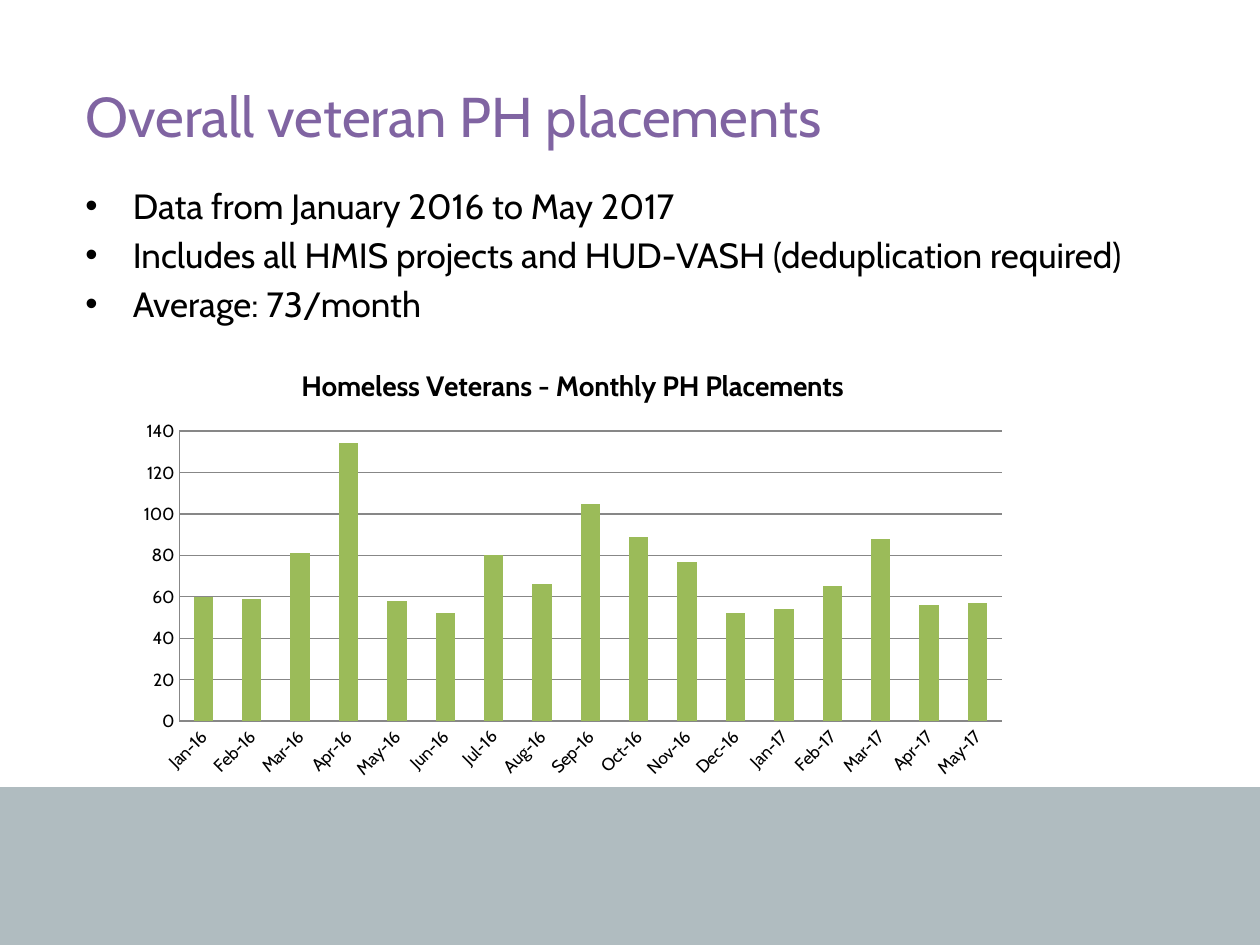
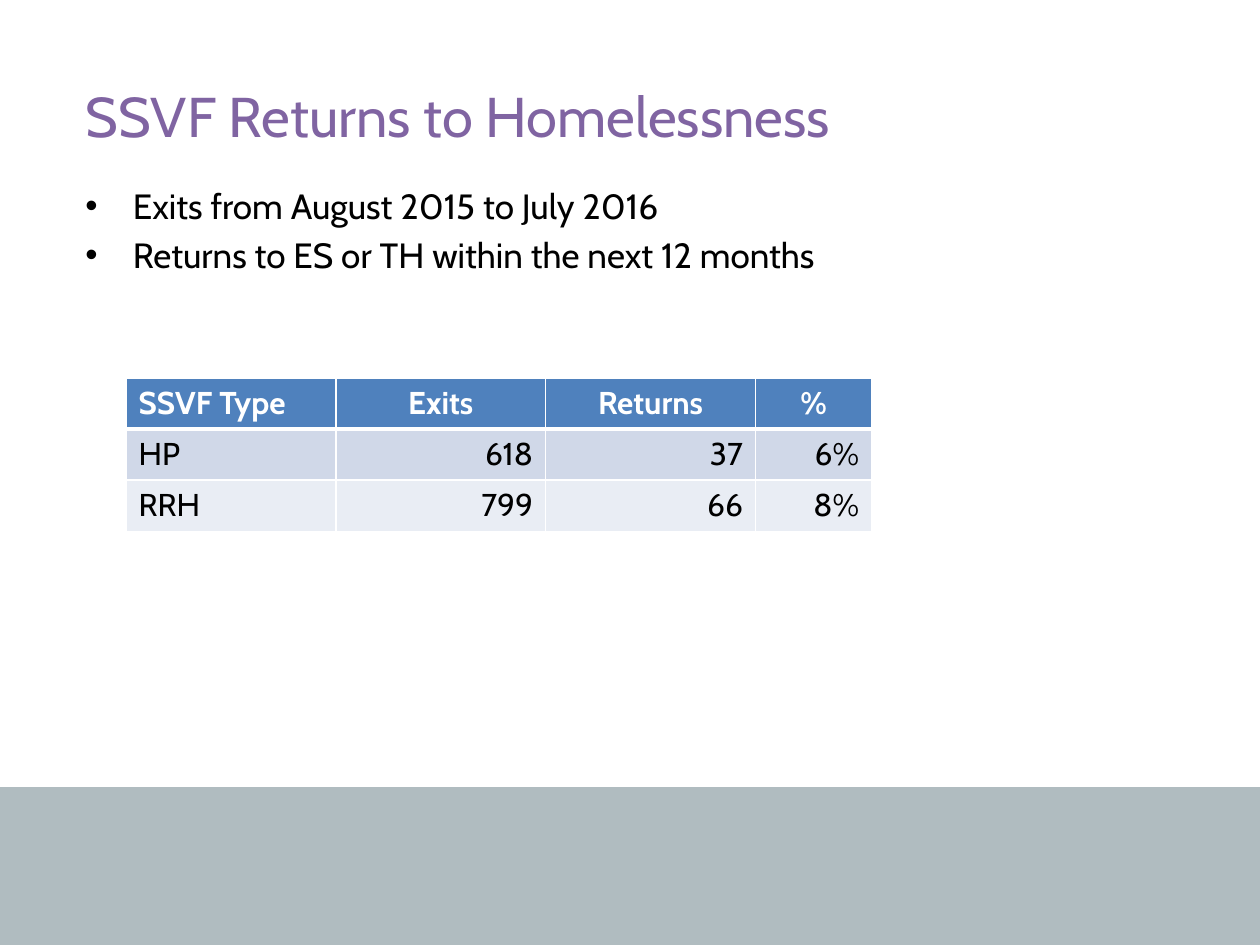
from dataclasses import dataclass

import pptx
import pptx.chart.data
import pptx.dml.color
import pptx.enum.chart
import pptx.enum.shapes
import pptx.enum.text
import pptx.oxml
import pptx.oxml.ns
import pptx.util
from lxml import etree
from pptx.util import Cm

FONT = "Cabin"
BLACK, WHITE = "000000", "FFFFFF"
PURPLE, BAND_GREY, GRID_GREY = "8064A2", "B0BCC0", "878787"
BAR_GREEN, HEADER_BLUE = "9BBB59", "4F81BD"
ROW_FILLS = ("D0D8E8", "E9EDF4")
SLIDE_W, SLIDE_H, BAND_H = Cm(25.4), Cm(19.05), Cm(3.18)
TEXT_LEFT, TEXT_W, INDENT = Cm(1.47), Cm(22.86), Cm(0.96)
CONTENT_LEFT = Cm(2.54)

ALIGN = pptx.enum.text.PP_ALIGN

MONTHS = "Jan Feb Mar Apr May Jun Jul Aug Sep Oct Nov Dec".split()
PLACEMENTS = (60, 59, 81, 134, 58, 52, 80, 66, 105, 89, 77, 52, 54, 65, 88, 56, 57)


@dataclass
class Column:
    header: str
    width: int
    values: tuple[str, ...]
    header_align: ALIGN = ALIGN.CENTER
    align: ALIGN = ALIGN.RIGHT


RETURNS_TABLE = (
    Column("SSVF Type", Cm(4.23), ("HP", "RRH"), ALIGN.LEFT, ALIGN.LEFT),
    Column("Exits", Cm(4.23), ("618", "799")),
    Column("Returns", Cm(4.23), ("37", "66")),
    Column("%", Cm(2.34), ("6%", "8%")),
)


# Shared helpers
def rgb(value: str) -> pptx.dml.color.RGBColor:
    return pptx.dml.color.RGBColor.from_string(value)


def set_font(font, size: float, color: str = BLACK, bold: bool = False) -> None:
    font.name, font.size, font.bold = FONT, pptx.util.Pt(size), bold
    font.color.rgb = rgb(color)


def write(p, text: str, *, size: float, color: str = BLACK, bold: bool = False,
          align: ALIGN = ALIGN.LEFT, before: float = 0) -> None:
    p.alignment = align
    p.space_before = pptx.util.Pt(before)
    r = p.add_run()
    r.text = text
    set_font(r.font, size, color, bold)


def add_bullet(p) -> None:
    pPr = p._p.get_or_add_pPr()
    pPr.set("marL", str(INDENT))
    pPr.set("indent", str(-INDENT))
    for tag, name, value in (("a:buFont", "typeface", "Arial"), ("a:buChar", "char", "•")):
        etree.SubElement(pPr, pptx.oxml.ns.qn(tag)).set(name, value)


def set_border(cell, side: str, width: float) -> None:
    ln = etree.SubElement(cell._tc.get_or_add_tcPr(), pptx.oxml.ns.qn(f"a:ln{side}"))
    ln.set("w", str(pptx.util.Pt(width)))
    fill = etree.SubElement(ln, pptx.oxml.ns.qn("a:solidFill"))
    etree.SubElement(fill, pptx.oxml.ns.qn("a:srgbClr")).set("val", WHITE)


def new_slide(prs, title: str, bullets: tuple[str, ...]):
    s = prs.slides.add_slide(prs.slide_layouts[5])

    # Bottom band
    band = s.shapes.add_shape(pptx.enum.shapes.MSO_SHAPE.RECTANGLE,
                              0, SLIDE_H - BAND_H, SLIDE_W, BAND_H)
    band.shadow.inherit = False
    band.fill.solid()
    band.fill.fore_color.rgb = rgb(BAND_GREY)
    band.line.fill.background()

    # Title
    sp = s.shapes.title
    sp.left, sp.top, sp.width, sp.height = TEXT_LEFT, Cm(1.52), TEXT_W, Cm(1.8)
    tf = sp.text_frame
    tf.word_wrap = True
    tf.auto_size = pptx.enum.text.MSO_AUTO_SIZE.NONE
    tf.vertical_anchor = pptx.enum.text.MSO_ANCHOR.TOP
    write(tf.paragraphs[0], title, size=32, color=PURPLE)

    # Bullets
    tf = s.shapes.add_textbox(TEXT_LEFT, Cm(3.6), TEXT_W, Cm(1.05) * len(bullets)).text_frame
    tf.word_wrap = True
    for i, text in enumerate(bullets):
        p = tf.add_paragraph() if i else tf.paragraphs[0]
        add_bullet(p)
        write(p, text, size=20, before=4 if i else 0)
    return s


# Slide contents
def add_placements_chart(s) -> None:
    data = pptx.chart.data.CategoryChartData()
    data.categories = [f"{MONTHS[i % 12]}-{16 + i // 12}" for i in range(len(PLACEMENTS))]
    data.add_series("PH Placements", PLACEMENTS)
    chart = s.shapes.add_chart(pptx.enum.chart.XL_CHART_TYPE.COLUMN_STACKED, CONTENT_LEFT,
                               Cm(6.99), Cm(18.01), Cm(8.89), data).chart
    set_font(chart.font, 10)
    chart.has_legend = False
    chart.has_title = True
    write(chart.chart_title.text_frame.paragraphs[0],
          "Homeless Veterans - Monthly PH Placements", size=16, bold=True, align=ALIGN.CENTER)

    plot = chart.plots[0]
    plot.gap_width, plot.overlap, plot.vary_by_categories = 150, 100, False
    fill = plot.series[0].format.fill
    fill.solid()
    fill.fore_color.rgb = rgb(BAR_GREEN)

    value_axis, month_axis = chart.value_axis, chart.category_axis
    value_axis.minimum_scale, value_axis.maximum_scale, value_axis.major_unit = 0, 140, 20
    value_axis.has_major_gridlines = True
    for axis in (value_axis, month_axis):
        axis.major_tick_mark = pptx.enum.chart.XL_TICK_MARK.NONE
        set_font(axis.tick_labels.font, 10)
    for part in (value_axis, month_axis, value_axis.major_gridlines):
        part.format.line.color.rgb = rgb(GRID_GREY)
        part.format.line.width = pptx.util.Pt(0.75)
    month_axis._element.find(pptx.oxml.ns.qn("c:txPr")).bodyPr.set("rot", "-2700000")


def add_returns_table(s) -> None:
    row_count = 1 + len(RETURNS_TABLE[0].values)
    table = s.shapes.add_table(row_count, len(RETURNS_TABLE), CONTENT_LEFT, Cm(7.62),
                               sum(c.width for c in RETURNS_TABLE), Cm(1.03) * row_count).table
    for x, column in enumerate(RETURNS_TABLE):
        table.columns[x].width = column.width
        for y, text in enumerate((column.header, *column.values)):
            header = y == 0
            cell = table.cell(y, x)
            for side, width in (("L", 1), ("R", 1), ("T", 3 if y == 1 else 1),
                                ("B", 3 if header else 1)):
                set_border(cell, side, width)
            cell.fill.solid()
            cell.fill.fore_color.rgb = rgb(HEADER_BLUE if header else ROW_FILLS[(y - 1) % 2])
            write(cell.text_frame.paragraphs[0], text, size=18, bold=header,
                  color=WHITE if header else BLACK,
                  align=column.header_align if header else column.align)


def main() -> None:
    prs = pptx.Presentation()
    prs.slide_width, prs.slide_height = SLIDE_W, SLIDE_H

    s = new_slide(prs, "Overall veteran PH placements", (
        "Data from January 2016 to May 2017",
        "Includes all HMIS projects and HUD-VASH (deduplication required)",
        "Average: 73/month"))
    add_placements_chart(s)

    s = new_slide(prs, "SSVF Returns to Homelessness", (
        "Exits from August 2015 to July 2016",
        "Returns to ES or TH within the next 12 months"))
    add_returns_table(s)

    prs.save("out.pptx")


if __name__ == "__main__":
    main()
